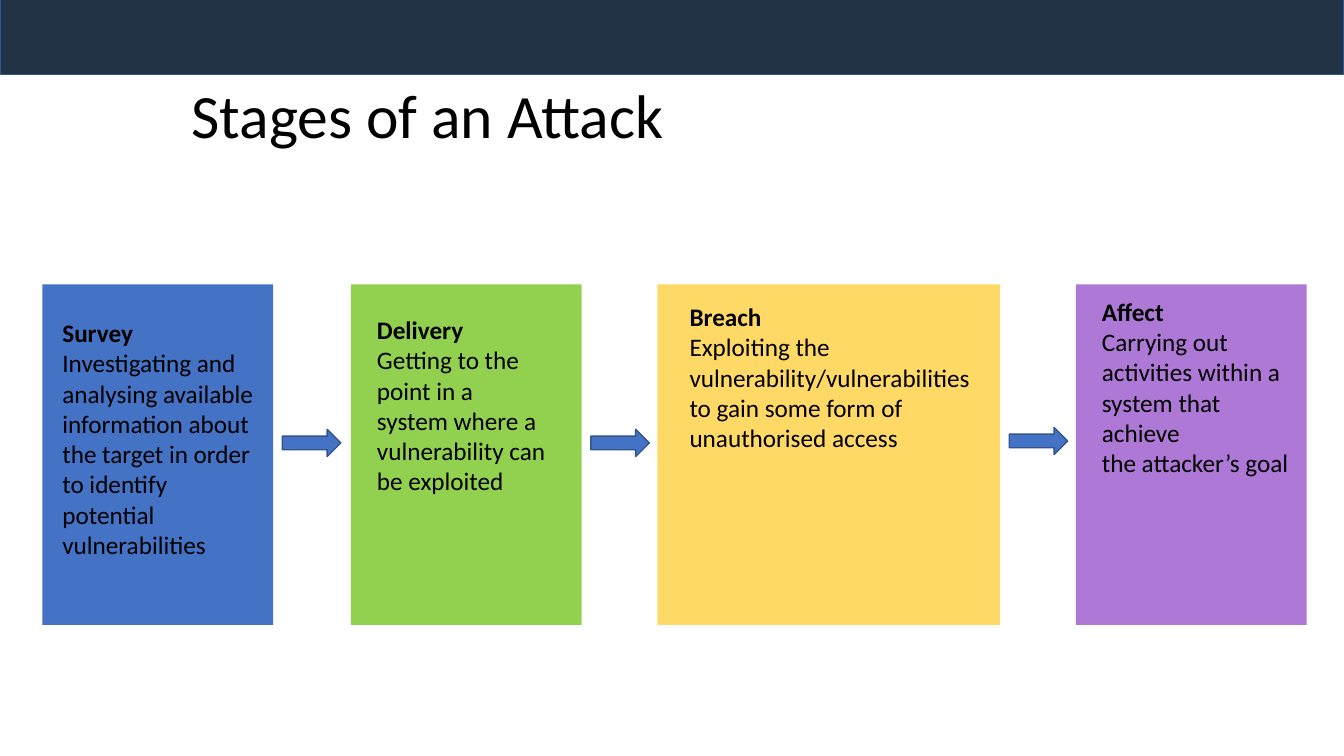
"""Build the "Stages of an Attack" slide: four stage cards joined by arrows."""
import pptx
import pptx.dml.color
import pptx.enum.shapes
import pptx.enum.text
import pptx.util

SHAPE = pptx.enum.shapes.MSO_SHAPE
ANCHOR = pptx.enum.text.MSO_ANCHOR
inch = pptx.util.Inches

W, H = 13.33, 7.5
CARD_TOP, CARD_H = 2.82, 3.38
ARROW_W, ARROW_H, ARROW_GAP = 0.58, 0.27, 0.09

prs = pptx.Presentation()
prs.slide_width, prs.slide_height = inch(W), inch(H)
s = prs.slides.add_slide(prs.slide_layouts[6])


def add_block(kind, x, y, w, h, fill, line=None):
    """Add a filled shape, outlined only when a line colour is given."""
    sp = s.shapes.add_shape(kind, inch(x), inch(y), inch(w), inch(h))
    sp.shadow.inherit = False
    sp.fill.solid()
    sp.fill.fore_color.rgb = pptx.dml.color.RGBColor.from_string(fill)
    if line:
        sp.line.color.rgb = pptx.dml.color.RGBColor.from_string(line)
        sp.line.width = pptx.util.Pt(1)
    else:
        sp.line.fill.background()


def add_text(x, y, w, h, lines, size, anchor=ANCHOR.TOP, heading=True):
    """Add a wrapped text box whose first line may be a bold heading."""
    tf = s.shapes.add_textbox(inch(x), inch(y), inch(w), inch(h)).text_frame
    tf.word_wrap = True
    tf.vertical_anchor = anchor
    tf.text = "\n".join(lines)
    for i, p in enumerate(tf.paragraphs):
        for r in p.runs:
            r.font.name = "Calibri"
            r.font.size = pptx.util.Pt(size)
            r.font.bold = heading and i == 0
            r.font.color.rgb = pptx.dml.color.RGBColor.from_string("000000")
    return tf


add_block(SHAPE.RECTANGLE, 0, -0.04, W, 0.78, "223346", "325491")
title = add_text(1.8, 0.45, 11.5, 1.45, ["Stages of an Attack"], 44, ANCHOR.MIDDLE, False)
title.paragraphs[0].line_spacing = 0.9

stages = [
    (0.42, 2.29, "4472C4", (0.52, 3.1, 2.12, 2.52),
     ["Survey",
      "Investigating and analysing available information about the target "
      "in order to identify potential vulnerabilities"]),
    (3.48, 2.29, "92D050", (3.64, 3.07, 1.89, 1.92),
     ["Delivery", "Getting to the point in a system where a",
      "vulnerability can be exploited"]),
    (6.52, 3.4, "FFD966", (6.74, 2.94, 3.09, 1.62),
     ["Breach",
      "Exploiting the vulnerability/vulnerabilities to gain some form of "
      "unauthorised access"]),
    (10.67, 2.29, "AE78D6", (10.83, 2.89, 2.08, 1.92),
     ["Affect", "Carrying out activities within a system that achieve",
      "the attacker’s goal"]),
]
for x, w, fill, text_box, lines in stages:
    add_block(SHAPE.RECTANGLE, x, CARD_TOP, w, CARD_H, fill)
    add_text(*text_box, lines, 18)

for (x, w, *_), arrow_y in zip(stages, (4.26, 4.26, 4.24)):
    add_block(SHAPE.RIGHT_ARROW, x + w + ARROW_GAP, arrow_y, ARROW_W, ARROW_H,
              "4472C4", "325491")

prs.save("out.pptx")
